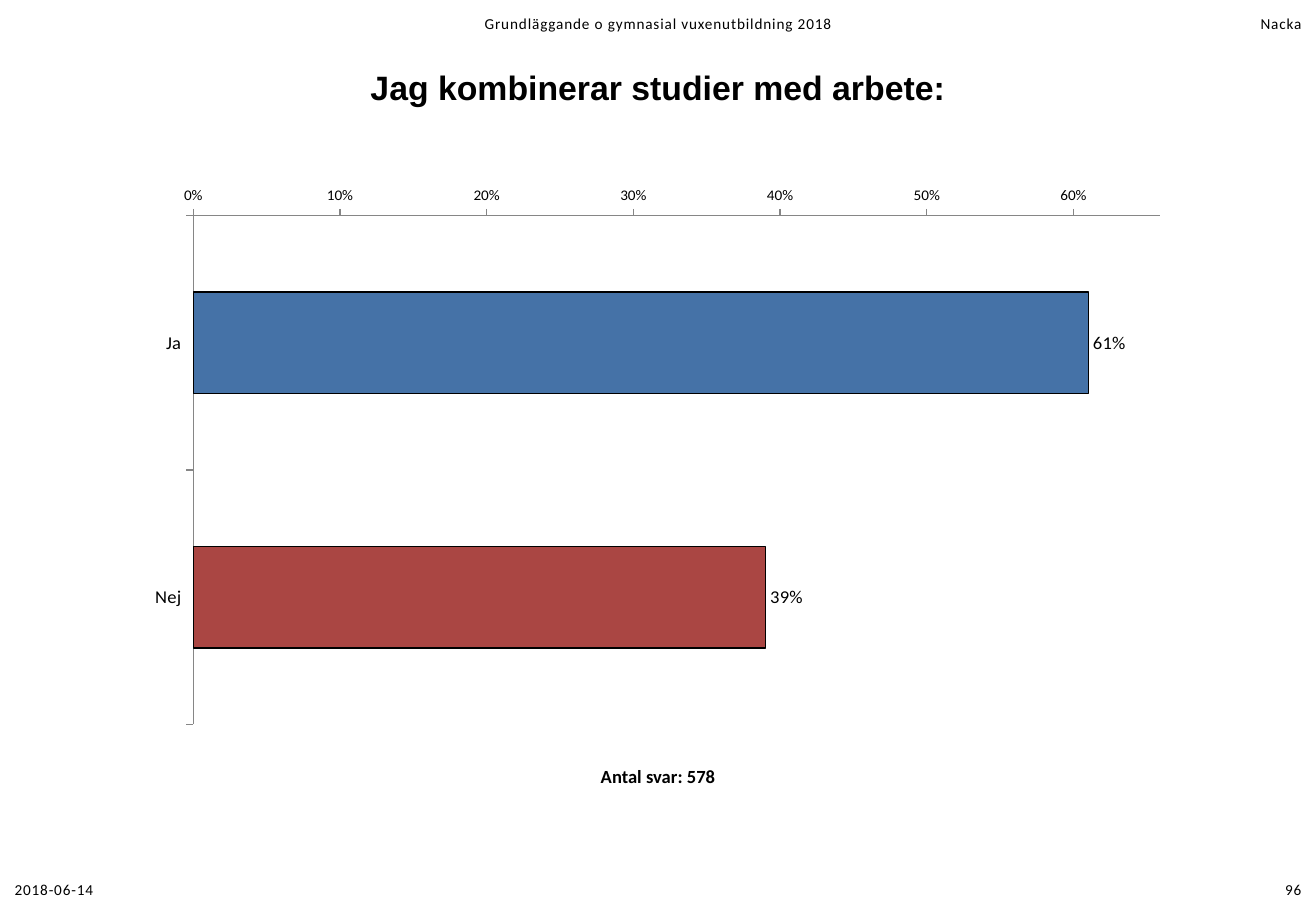
"""Build the survey slide on combining studies with work."""
from dataclasses import dataclass

from lxml.etree import SubElement
from pptx import Presentation
from pptx.chart.data import CategoryChartData
from pptx.dml.color import RGBColor
from pptx.enum.chart import XL_AXIS_CROSSES, XL_CHART_TYPE, XL_LABEL_POSITION, XL_TICK_MARK
from pptx.enum.text import MSO_ANCHOR, PP_ALIGN
from pptx.oxml.ns import qn
from pptx.slide import Slide
from pptx.util import Inches, Pt


@dataclass(frozen=True)
class Theme:
    """Fonts, colours and type sizes of the slide."""
    heading_font: str = "Arial"
    body_font: str = "Calibri"
    ink: RGBColor = RGBColor(0, 0, 0)
    axis: RGBColor = RGBColor(0x86, 0x86, 0x86)
    heading: float = 20
    label: float = 11
    small: float = 9
    line: float = 0.75


@dataclass(frozen=True)
class Caption:
    """A single line of text and its place in inches."""
    text: str
    left: float
    top: float
    width: float
    height: float
    align: PP_ALIGN = PP_ALIGN.CENTER
    anchor: MSO_ANCHOR = MSO_ANCHOR.TOP
    font: str = "Calibri"
    size: float = 9
    bold: bool = False
    spacing: int = 0


@dataclass(frozen=True)
class Answer:
    """An answer option with its share and bar colour."""
    name: str
    share: float
    color: RGBColor


THEME = Theme()
CAPTIONS = (
    Caption("Grundläggande o gymnasial vuxenutbildning 2018", 3.65, 0.12, 3.53, 0.56, spacing=50),
    Caption("Nacka", 7.18, 0.12, 3.53, 0.56, PP_ALIGN.RIGHT, spacing=50),
    Caption("96", 5.41, 6.97, 5.3, 0.43, PP_ALIGN.RIGHT, MSO_ANCHOR.BOTTOM, spacing=50),
    Caption("2018-06-14", 0.12, 6.97, 5.3, 0.43, PP_ALIGN.LEFT, MSO_ANCHOR.BOTTOM, spacing=50),
    Caption("Jag kombinerar studier med arbete:", 0.12, 0.55, 10.59, 0.74,
            font=THEME.heading_font, size=THEME.heading, bold=True),
    Caption("Antal svar: 578", 0.12, 6.3, 10.59, 0.24, size=THEME.label, bold=True),
)
ANSWERS = (
    Answer("Ja", 0.61, RGBColor(0x45, 0x72, 0xA7)),
    Answer("Nej", 0.39, RGBColor(0xAA, 0x46, 0x43)),
)
PERCENT = "0%;0%"
PLOT_LAYOUT = {"layoutTarget": "inner", "xMode": "edge", "yMode": "edge",
               "x": "0.057", "y": "0.019", "w": "0.923", "h": "0.908"}


def add_caption(page: Slide, caption: Caption) -> None:
    """Place one caption on the page."""
    box = page.shapes.add_textbox(Inches(caption.left), Inches(caption.top),
                                  Inches(caption.width), Inches(caption.height))
    frame = box.text_frame
    frame.word_wrap = True
    frame.vertical_anchor = caption.anchor
    frame.margin_left = frame.margin_right = frame.margin_top = frame.margin_bottom = 0
    para = frame.paragraphs[0]
    para.alignment = caption.align
    span = para.add_run()
    span.text = caption.text
    span.font.name = caption.font
    span.font.size = Pt(caption.size)
    span.font.bold = caption.bold
    span.font.color.rgb = THEME.ink
    if caption.spacing:
        span.font._element.set("spc", str(caption.spacing))


def set_plot_layout(plot_area) -> None:
    """Fix the inner plot rectangle as fractions of the chart."""
    for old in plot_area.findall(qn("c:layout")):
        plot_area.remove(old)
    layout = SubElement(plot_area, qn("c:layout"))
    plot_area.insert(0, layout)
    manual = SubElement(layout, qn("c:manualLayout"))
    for name, value in PLOT_LAYOUT.items():
        SubElement(manual, qn(f"c:{name}")).set("val", value)


def add_answer_chart(page: Slide, answers: tuple[Answer, ...]) -> None:
    """Draw the answers as horizontal bars."""
    data = CategoryChartData(number_format=PERCENT)
    data.categories = [answer.name for answer in answers]
    data.add_series("Series 1", [answer.share for answer in answers])
    chart = page.shapes.add_chart(XL_CHART_TYPE.BAR_CLUSTERED, Inches(1.1), Inches(1.54),
                                  Inches(8.62), Inches(4.76), data).chart
    chart.has_title = False
    chart.has_legend = False
    chart.font.name = THEME.body_font
    chart.font.size = Pt(10)
    chart.font.color.rgb = THEME.ink

    names, shares = chart.category_axis, chart.value_axis
    for axis, size in ((names, THEME.label), (shares, THEME.small)):
        axis.has_major_gridlines = False
        axis.major_tick_mark = XL_TICK_MARK.OUTSIDE
        axis.minor_tick_mark = XL_TICK_MARK.NONE
        axis.tick_labels.font.size = Pt(size)
        axis.format.line.color.rgb = THEME.axis
        axis.format.line.width = Pt(THEME.line)
    names.reverse_order = True
    names.crosses = XL_AXIS_CROSSES.MAXIMUM
    shares.minimum_scale = 0
    shares.maximum_scale = 0.659
    shares.major_unit = 0.1
    shares.tick_labels.number_format = PERCENT
    shares.tick_labels.number_format_is_linked = False

    plot = chart.plots[0]
    plot.gap_width = 150
    plot.vary_by_categories = False
    plot.has_data_labels = True
    labels = plot.data_labels
    labels.show_value = True
    labels.number_format = PERCENT
    labels.number_format_is_linked = False
    labels.position = XL_LABEL_POSITION.OUTSIDE_END
    labels.font.size = Pt(THEME.label)
    series = plot.series[0]
    series.format.fill.solid()
    series.format.fill.fore_color.rgb = answers[0].color
    for index, answer in enumerate(answers):
        bar = series.points[index].format
        bar.fill.solid()
        bar.fill.fore_color.rgb = answer.color
        bar.line.color.rgb = THEME.ink
        bar.line.width = Pt(THEME.line)
    set_plot_layout(chart.element.find(".//" + qn("c:plotArea")))


def main() -> None:
    """Create and save the deck."""
    deck = Presentation()
    deck.slide_width, deck.slide_height = Inches(10.83), Inches(7.5)
    page = deck.slides.add_slide(deck.slide_layouts[6])
    for caption in CAPTIONS:
        add_caption(page, caption)
    add_answer_chart(page, ANSWERS)
    deck.save("out.pptx")


if __name__ == "__main__":
    main()
